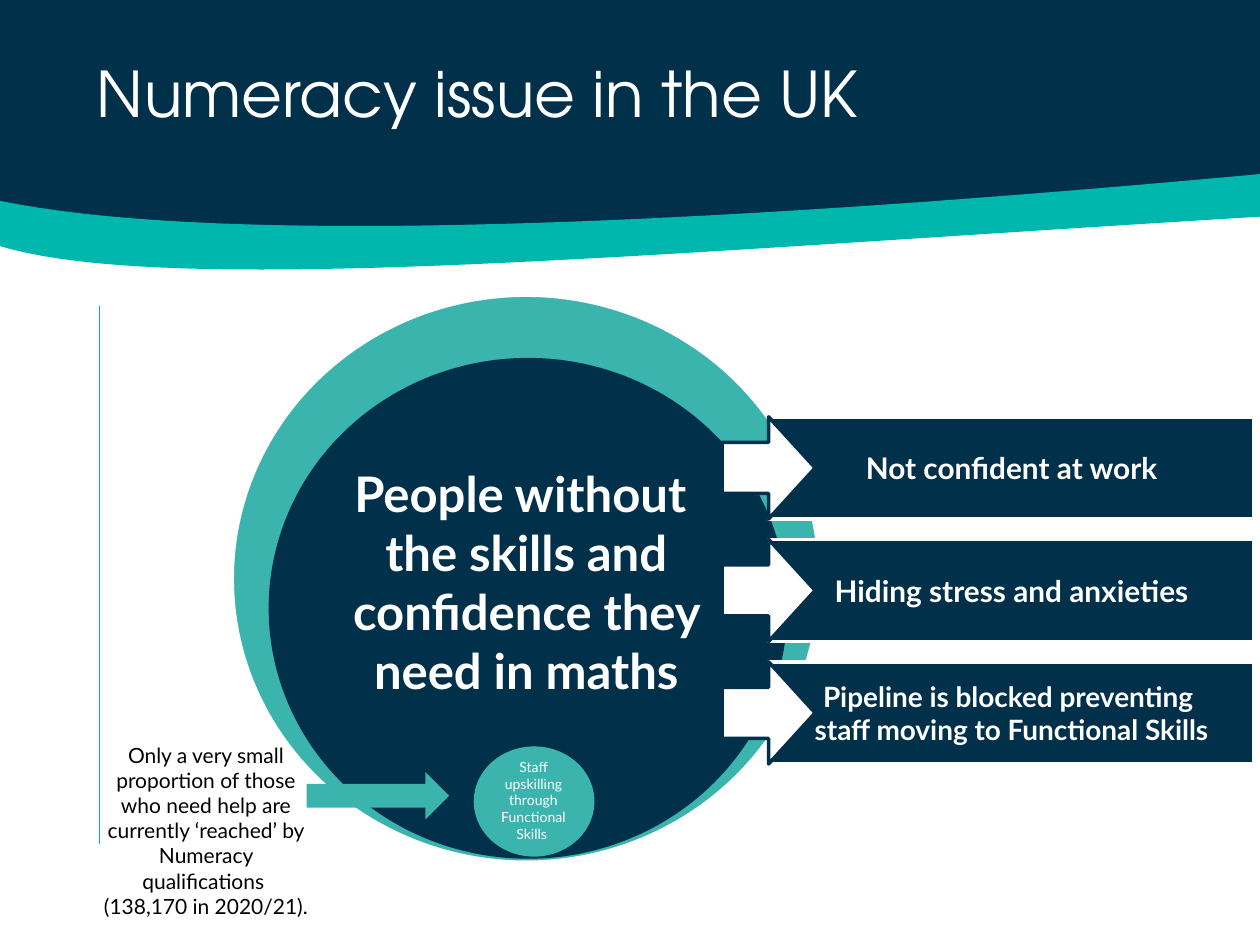
from lxml.etree import SubElement
from pptx import Presentation
from pptx.dml.color import RGBColor
from pptx.enum.shapes import MSO_CONNECTOR, MSO_SHAPE
from pptx.enum.text import MSO_ANCHOR, PP_ALIGN
from pptx.oxml.ns import qn
from pptx.util import Pt

NAVY, TEAL, SEA, WHITE = "00304A", "00B7AE", "3AB4AD", "FFFFFF"
color = RGBColor.from_string


def paint(shape, fill, line=None, width=1):
    shape.shadow.inherit = False
    shape.fill.solid()
    shape.fill.fore_color.rgb = color(fill)
    if line:
        shape.line.color.rgb = color(line)
        shape.line.width = Pt(width)
    else:
        shape.line.fill.background()


def write(shape, lines, size, tint, bold=False):
    frame = shape.text_frame
    frame.word_wrap = True
    frame.text = lines
    for par in frame.paragraphs:
        par.alignment = PP_ALIGN.CENTER
        par.font.name = "Lato"
        par.font.size = Pt(size)
        par.font.bold = bold
        par.font.color.rgb = color(tint)


deck = Presentation()
deck.slide_width, deck.slide_height = Pt(720), Pt(540)
slide = deck.slides.add_slide(deck.slide_layouts[5])
shapes = slide.shapes

bands = [
    (NAVY, [(720, 111.6), (478, 118), (237, 163.4), (-1.4, 131)], [(0, 0), (720, 0)]),
    (TEAL, [(-1.4, 114.5), (146.2, 145.4), (486, 121), (720.7, 99.4)], []),
]
under = [(720.7, 123.8), (380.9, 144), (97.2, 170.6), (-0.7, 140.4)]
for fill, top, rest in bands:
    curves = [top] if rest else [top, under]
    dots = []
    for a, b, c, d in curves:
        for step in range(41):
            t = step / 40
            u = 1 - t
            dots.append(tuple(
                100 * (u**3 * a[i] + 3 * u * u * t * b[i] + 3 * u * t * t * c[i] + t**3 * d[i])
                for i in (0, 1)))
    dots += [(100 * x, 100 * y) for x, y in rest]
    path = shapes.build_freeform(*dots[0], scale=127)
    path.add_line_segments(dots[1:], close=True)
    paint(path.convert_to_shape(), fill)

rule = shapes.add_connector(MSO_CONNECTOR.STRAIGHT, Pt(56.9), Pt(175), Pt(56.9), Pt(482.4))
rule.line.color.rgb = color(TEAL)
rule.line.width = Pt(0.5)
SubElement(rule.line._get_or_add_ln().getparent(), qn("a:effectLst"))

title = shapes.title
title.left, title.top, title.width, title.height = Pt(48.2), Pt(32.4), Pt(628.6), Pt(91.4)
title.text_frame.text = "Numeracy issue in the UK"
title.text_frame.vertical_anchor = MSO_ANCHOR.TOP
head = title.text_frame.paragraphs[0]
head.alignment = PP_ALIGN.LEFT
head.line_spacing = 0.9
head.font.name = "TeX Gyre Adventor"
head.font.size = Pt(36)
head.font.color.rgb = color(WHITE)
shapes._spTree.append(title._element)

rings = [
    (133.2, 169.2, 334.8, 323, SEA, WHITE),
    (154, 205, 295.4, 285.2, NAVY, NAVY),
    (271.2, 427, 68, 62, SEA, SEA),
]
for x, y, w, h, fill, line in rings:
    ring = shapes.add_shape(MSO_SHAPE.OVAL, Pt(x), Pt(y), Pt(w), Pt(h))
    paint(ring, fill, line)

notes = [
    (277.2, 429.8, 55.4, 55.4, "Staff upskilling through Functional Skills ", 8, WHITE, False),
    (189.4, 261.4, 222.5, 143.3,
     "People without \vthe skills and confidence they need in maths", 28, WHITE, True),
    (51.1, 420.5, 133.2, 108.7,
     "Only a very small proportion of those who need help are currently ‘reached’ by "
     "Numeracy qualifications \n(138,170 in 2020/21).", 12, "000000", False),
]
for x, y, w, h, *style in notes:
    write(shapes.add_textbox(Pt(x), Pt(y), Pt(w), Pt(h)), *style)

reach = shapes.add_shape(MSO_SHAPE.RIGHT_ARROW, Pt(175.2), Pt(441.2), Pt(81.4), Pt(27))
paint(reach, SEA)

effects = [
    ("Pipeline is blocked preventing \vstaff moving to Functional Skills", 16),
    ("Hiding stress and anxieties", 17),
    ("Not confident at work", 17),
]
for row, (words, size) in enumerate(effects):
    y = Pt(378.2 - 70 * row)
    bar = shapes.add_shape(MSO_SHAPE.RECTANGLE, Pt(439.6), y, Pt(277), Pt(58.4))
    paint(bar, NAVY, WHITE, 2)
    write(bar, words, size, WHITE, True)
    arrow = shapes.add_shape(MSO_SHAPE.RIGHT_ARROW, Pt(412.6), y, Pt(53.2), Pt(58.4))
    paint(arrow, WHITE, NAVY, 2)

deck.save("out.pptx")
